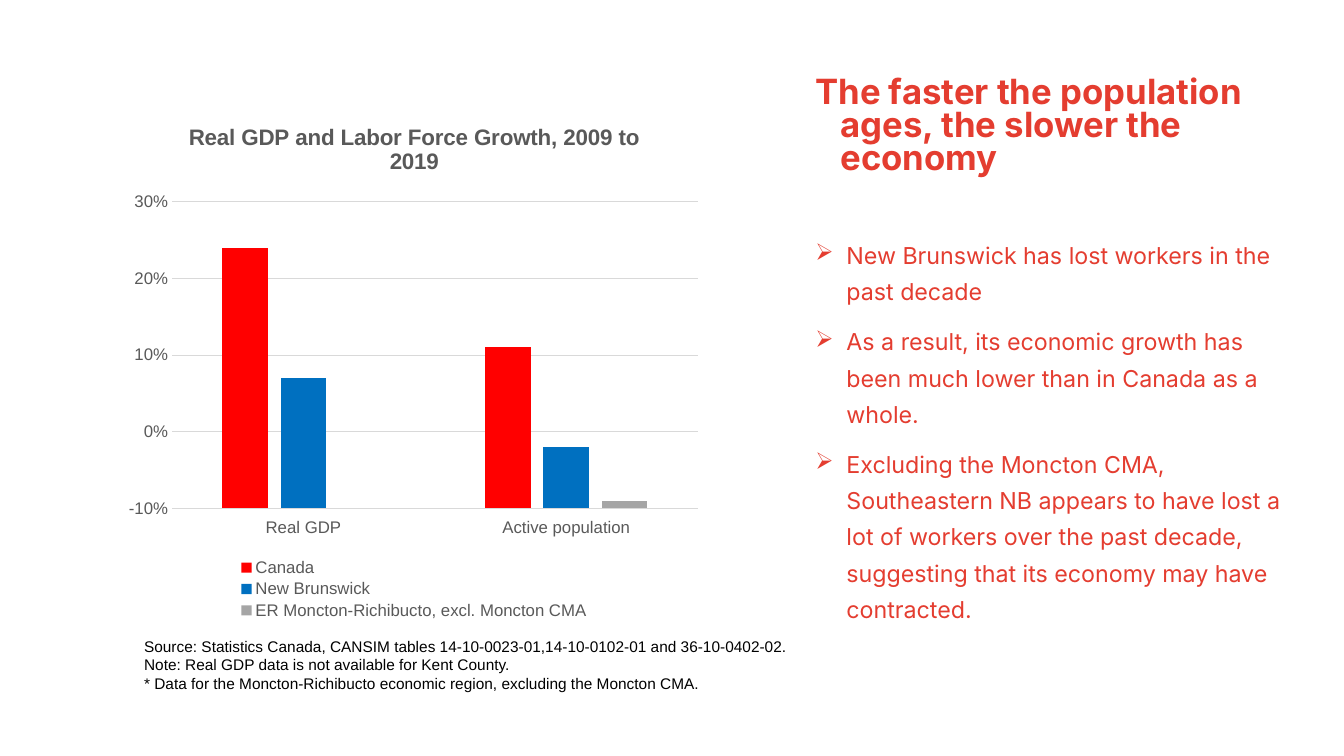
"""Build the slide on population ageing and economic growth."""
from lxml import etree
from pptx import Presentation, util as u
from pptx.chart.data import CategoryChartData
from pptx.dml.color import RGBColor
from pptx.enum import chart as charts
from pptx.oxml import ns

WIDTH, HEIGHT = u.Inches(13.333), u.Inches(7.5)
RED, GREY, PALE, BLACK = "E43D30", "595959", "D9D9D9", "000000"
HEADING = "The faster the population ages, the slower the economy"
FINDINGS = [
    "New Brunswick has lost workers in the past decade",
    "As a result, its economic growth has been much lower than in Canada as a whole.",
    "Excluding the Moncton CMA, Southeastern NB appears to have lost a lot of workers "
    "over the past decade, suggesting that its economy may have contracted.",
]
NOTES = [
    "Source: Statistics Canada, CANSIM tables 14-10-0023-01,14-10-0102-01 and 36-10-0402-02.",
    "Note: Real GDP data is not available for Kent County.",
    "* Data for the Moncton-Richibucto economic region, excluding the Moncton CMA.",
]
CHART_TITLE = "Real GDP and Labor Force Growth, 2009 to 2019"
CATEGORIES = ["Real GDP", "Active population"]
SERIES = [
    ("Canada", (0.24, 0.11), "FF0000"),
    ("New Brunswick", (0.07, -0.02), "0070C0"),
    ("ER Moncton-Richibucto, excl. Moncton CMA", (None, -0.09), "A5A5A5"),
]


def color(value):
    """Turn a hex string into a colour."""
    return RGBColor.from_string(value)


def place(left, top, width, height):
    """Turn places on a grid of 100 columns by 100 rows into lengths."""
    column, row = WIDTH / 100, HEIGHT / 100
    return [round(n) for n in (left * column, top * row, width * column, height * row)]


def set_font(font, size, shade, name="Arial", bold=False):
    """Set the face, size, colour and weight of a font."""
    font.name, font.size, font.bold = name, u.Pt(size), bold
    font.color.rgb = color(shade)


def add_bullet(properties, mark, shade):
    """Give a paragraph a coloured bullet character."""
    tint = etree.SubElement(properties, ns.qn("a:buClr"))
    etree.SubElement(tint, ns.qn("a:srgbClr"), val=shade)
    etree.SubElement(properties, ns.qn("a:buChar"), char=mark)


def add_text(page, area, lines, size, shade, name="Arial", bold=False,
             margin=0, hang=0, spacing=None, before=0, bullet=None):
    """Add a wrapped text box with one paragraph for each line."""
    box = page.shapes.add_textbox(*place(*area))
    frame = box.text_frame
    frame.word_wrap = True
    for number, line in enumerate(lines):
        para = frame.add_paragraph() if number else frame.paragraphs[0]
        span = para.add_run()
        span.text = line
        set_font(span.font, size, shade, name, bold)
        if spacing:
            para.line_spacing = spacing
        if number:
            para.space_before = u.Pt(before)
        properties = para._p.get_or_add_pPr()
        properties.set("marL", str(u.Inches(margin)))
        properties.set("indent", str(u.Inches(-hang)))
        if bullet:
            add_bullet(properties, bullet, shade)


def set_layout(element, index, **shares):
    """Fix the place of a chart part as shares of the chart's size."""
    for old in element.findall(ns.qn("c:layout")):
        element.remove(old)
    layout = etree.Element(ns.qn("c:layout"))
    manual = etree.SubElement(layout, ns.qn("c:manualLayout"))
    if index == 0:
        etree.SubElement(manual, ns.qn("c:layoutTarget"), val="inner")
    for edge in "xy":
        etree.SubElement(manual, ns.qn(f"c:{edge}Mode"), val="edge")
    for key, share in shares.items():
        etree.SubElement(manual, ns.qn(f"c:{key}"), val=str(share))
    element.insert(index, layout)


def style_axes(chart):
    """Format both axes and the gridlines."""
    for axis in (chart.category_axis, chart.value_axis):
        axis.major_tick_mark = axis.minor_tick_mark = charts.XL_TICK_MARK.NONE
        set_font(axis.tick_labels.font, 12, GREY)
    chart.category_axis.tick_label_position = charts.XL_TICK_LABEL_POSITION.LOW
    values = chart.value_axis
    values.minimum_scale, values.maximum_scale, values.major_unit = -0.1, 0.3, 0.1
    values.crosses = charts.XL_AXIS_CROSSES.MINIMUM
    values.tick_labels.number_format = "0%"
    values.tick_labels.number_format_is_linked = False
    values.format.line.fill.background()
    for line in (chart.category_axis.format.line, values.major_gridlines.format.line):
        line.color.rgb, line.width = color(PALE), u.Pt(0.75)


def add_growth_chart(page, area):
    """Add the clustered columns with their title and legend."""
    data = CategoryChartData(number_format="0%")
    data.categories = CATEGORIES
    for name, values, _ in SERIES:
        data.add_series(name, values)
    kind = charts.XL_CHART_TYPE.COLUMN_CLUSTERED
    chart = page.shapes.add_chart(kind, *place(*area), data).chart
    set_font(chart.font, 10, BLACK)
    style_axes(chart)
    plot = chart.plots[0]
    plot.vary_by_categories, plot.gap_width, plot.overlap = False, 219, -27
    for series, (_, _, shade) in zip(plot.series, SERIES):
        series.invert_if_negative = False
        series.format.fill.solid()
        series.format.fill.fore_color.rgb = color(shade)
    title = chart.chart_title.text_frame
    title.text = CHART_TITLE
    set_font(title.paragraphs[0].runs[0].font, 16, GREY, bold=True)
    chart.has_legend = True
    chart.legend.position = charts.XL_LEGEND_POSITION.BOTTOM
    chart.legend.include_in_layout = False
    set_font(chart.legend.font, 12, GREY)
    set_layout(plot._element.getparent(), 0, x=0.09, y=0.19, w=0.89, h=0.59)
    set_layout(chart.legend._element, 1, x=0.2, y=0.87, w=0.6, h=0.13)


def main():
    """Build and save the deck."""
    deck = Presentation()
    deck.slide_width, deck.slide_height = WIDTH, HEIGHT
    page = deck.slides.add_slide(deck.slide_layouts[6])
    add_text(page, (58.05, 9.6, 38.18, 17.33), [HEADING], 24.8, RED, "Inter",
             bold=True, margin=0.5, hang=0.25, spacing=0.8)
    add_text(page, (58.05, 30.13, 38.18, 57.73), FINDINGS, 16.6, RED, "Inter",
             margin=0.56, hang=0.31, spacing=1.3, before=10, bullet="➢")
    add_growth_chart(page, (8.85, 13.6, 43.95, 68.8))
    add_text(page, (9.98, 83.6, 51.98, 8.8), NOTES, 11, BLACK)
    deck.save("out.pptx")


if __name__ == "__main__":
    main()
